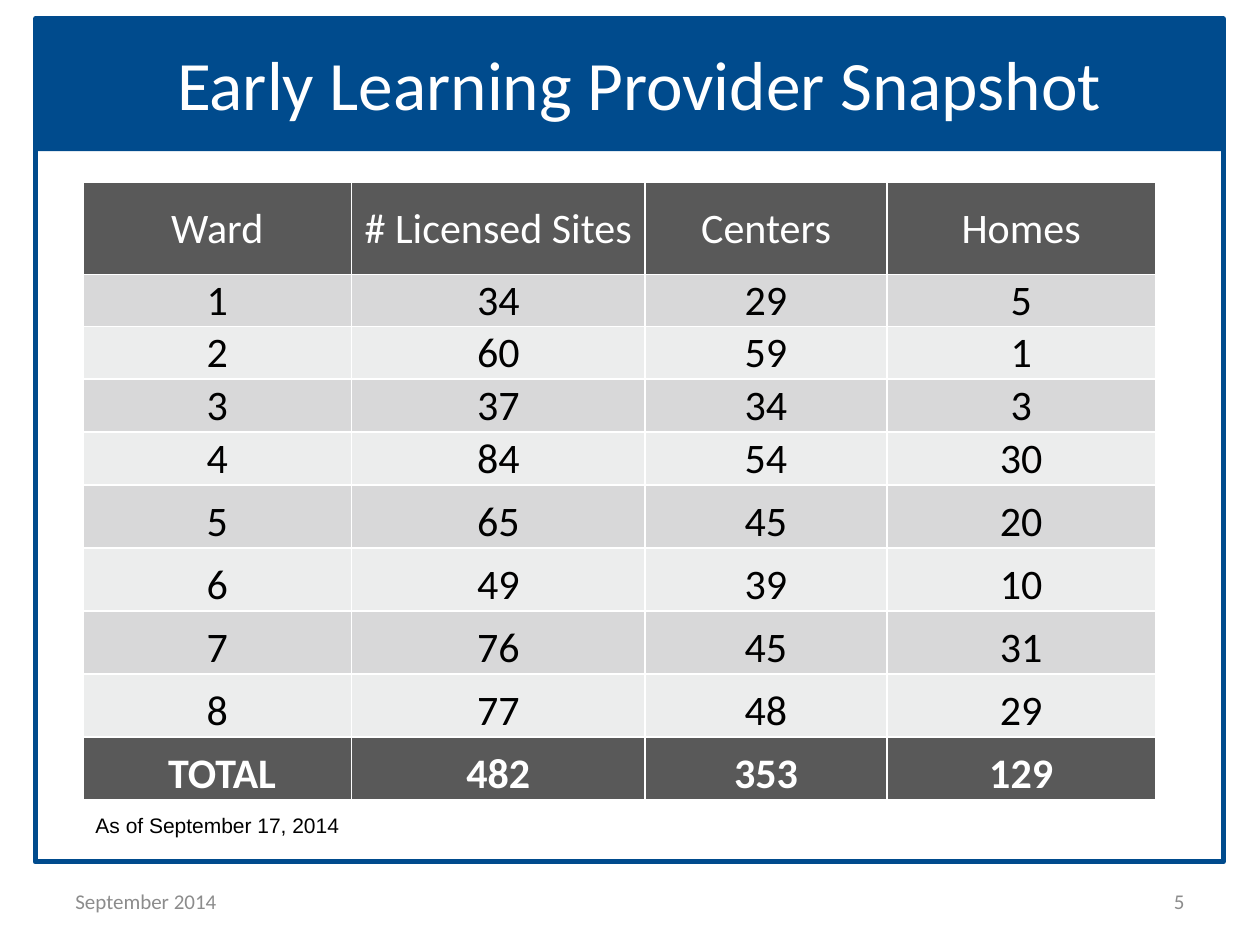
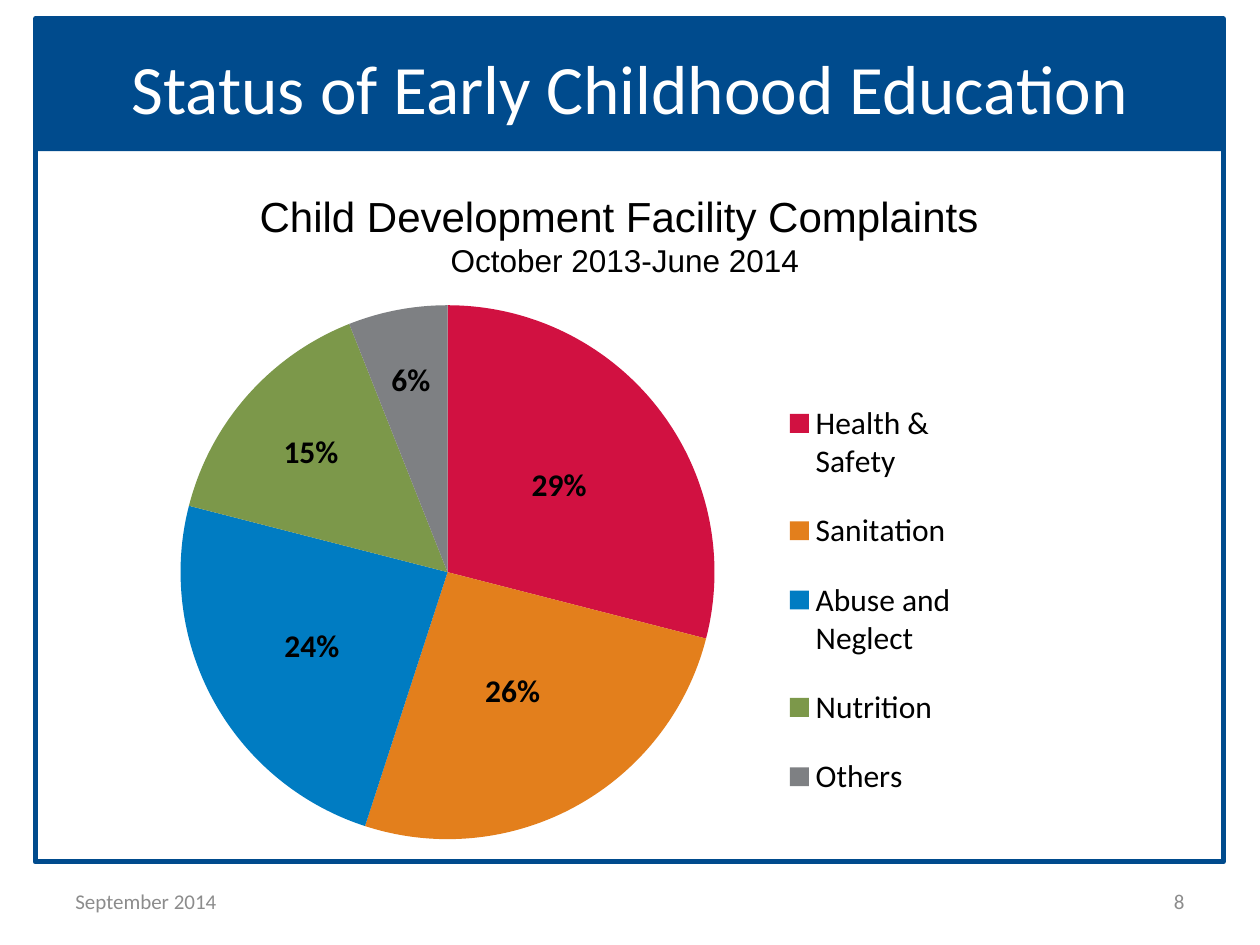
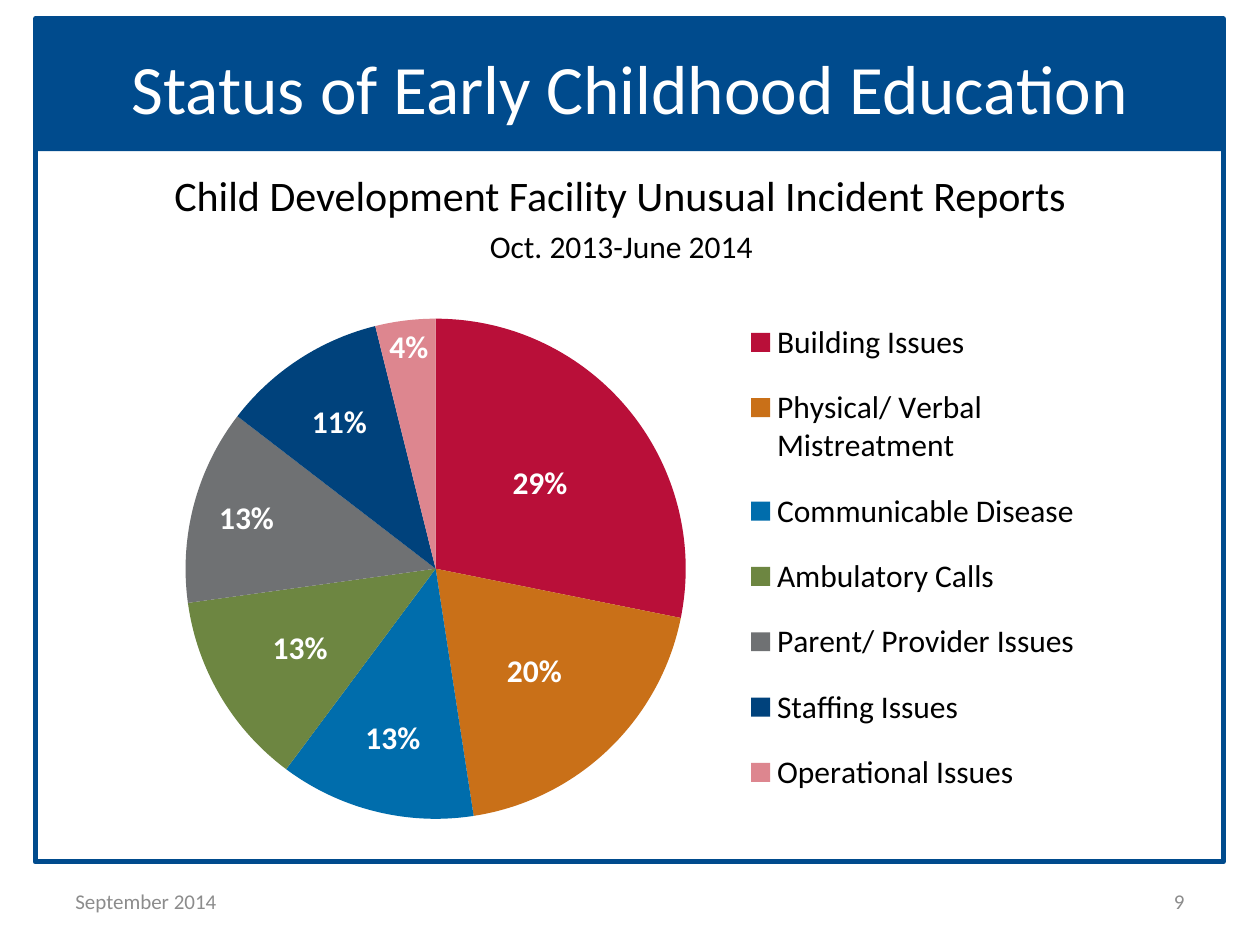
"""Build three early-learning slides: a provider table and two pie charts."""
from dataclasses import dataclass
from math import cos, pi, sin

from pptx import Presentation
from pptx import util as u
from pptx.chart.data import CategoryChartData
from pptx.dml.color import RGBColor
from pptx.enum import chart as ch, shapes, text
from pptx.oxml import parse_xml
from pptx.oxml.ns import nsdecls, qn

PX = 9144
BLUE = RGBColor(0x00, 0x4B, 0x8D)
WHITE = RGBColor(0xFF, 0xFF, 0xFF)
BLACK = RGBColor(0x00, 0x00, 0x00)
GRAY = RGBColor(0x8C, 0x8C, 0x8C)
DARK = RGBColor(0x59, 0x59, 0x59)
BAND_ODD = RGBColor(0xD8, 0xD8, 0xD9)
BAND_EVEN = RGBColor(0xEC, 0xED, 0xED)
LEFT, CENTER, RIGHT = text.PP_ALIGN.LEFT, text.PP_ALIGN.CENTER, text.PP_ALIGN.RIGHT
TOP, MIDDLE, BOTTOM = text.MSO_ANCHOR.TOP, text.MSO_ANCHOR.MIDDLE, text.MSO_ANCHOR.BOTTOM

HEADERS = ("Ward", "# Licensed Sites", "Centers", "Homes")
WARDS = ((34, 29, 5), (60, 59, 1), (37, 34, 3), (84, 54, 30),
         (65, 45, 20), (49, 39, 10), (76, 45, 31), (77, 48, 29))
COLUMN_WIDTHS = (213, 233, 192, 213)
ROW_HEIGHTS = (73, 41, 42, 42, 42, 50, 50, 50, 50, 50)


@dataclass(frozen=True)
class Box:
    """A rectangle in px."""
    x: int
    y: int
    w: int
    h: int

    def emu(self) -> tuple[int, ...]:
        """Return the rectangle in EMU."""
        return tuple(v * PX for v in (self.x, self.y, self.w, self.h))


@dataclass(frozen=True)
class Line:
    """One paragraph of text with its style."""
    words: str
    size: float
    color: RGBColor = BLACK
    align: int = LEFT
    font: str = "Calibri"
    before: int = 0
    bold: bool = False


@dataclass(frozen=True)
class Slice:
    """A pie slice; reach is the label's distance as a share of the radius."""
    name: str
    percent: int
    color: RGBColor
    reach: float


@dataclass(frozen=True)
class Pie:
    """A pie chart with its plot and legend areas in slide px."""
    box: Box
    plot: Box
    legend: Box
    label_color: RGBColor
    slices: tuple[Slice, ...]


COMPLAINTS = Pie(
    Box(94, 149, 704, 545), Box(143, 242, 424, 424), Box(618, 296, 146, 360), BLACK,
    (Slice("Health & Safety", 29, RGBColor(0xD1, 0x11, 0x41), 0.53),
     Slice("Sanitation", 26, RGBColor(0xE3, 0x7F, 0x1C), 0.51),
     Slice("Abuse and Neglect", 24, RGBColor(0x00, 0x7C, 0xC2), 0.58),
     Slice("Nutrition", 15, RGBColor(0x7C, 0x98, 0x4A), 0.68),
     Slice("Others", 6, RGBColor(0x7E, 0x80, 0x83), 0.73)))

INCIDENTS = Pie(
    Box(105, 177, 762, 500), Box(146, 253, 399, 397), Box(590, 235, 270, 415), WHITE,
    (Slice("Building Issues ", 29, RGBColor(0xB9, 0x0F, 0x39), 0.54),
     Slice("Physical/ Verbal Mistreatment", 20, RGBColor(0xC9, 0x70, 0x18), 0.57),
     Slice("Communicable Disease", 13, RGBColor(0x00, 0x6D, 0xAC), 0.7),
     Slice("Ambulatory Calls", 13, RGBColor(0x6D, 0x86, 0x41), 0.63),
     Slice("Parent/ Provider Issues", 13, RGBColor(0x6F, 0x71, 0x73), 0.78),
     Slice("Staffing Issues", 11, RGBColor(0x00, 0x42, 0x7C), 0.7),
     Slice("Operational Issues", 4, RGBColor(0xDD, 0x86, 0x8F), 0.89)))


def write(tf, lines: tuple[Line, ...], anchor: int) -> None:
    """Fill a text frame with styled paragraphs."""
    tf.word_wrap = True
    tf.vertical_anchor = anchor
    for i, line in enumerate(lines):
        p = tf.paragraphs[0] if i == 0 else tf.add_paragraph()
        p.text = line.words
        p.alignment = line.align
        p.space_before = u.Pt(line.before)
        f = p.font
        f.name, f.size, f.bold = line.font, u.Pt(line.size), line.bold
        f.color.rgb = line.color


def add_text(s, box: Box, *lines: Line, anchor: int = TOP) -> None:
    """Add a text box."""
    write(s.shapes.add_textbox(*box.emu()).text_frame, lines, anchor)


def add_rect(s, box: Box, filled: bool) -> None:
    """Add a blue rectangle, either filled or outlined."""
    sp = s.shapes.add_shape(shapes.MSO_SHAPE.RECTANGLE, *box.emu())
    sp.shadow.inherit = False
    if filled:
        sp.fill.solid()
        sp.fill.fore_color.rgb = BLUE
        sp.line.fill.background()
    else:
        sp.fill.background()
        sp.line.color.rgb = BLUE
        sp.line.width = u.Pt(3)


def add_page(prs, title: str, title_box: Box, number: int):
    """Add a slide with its band, frame, title and footer."""
    s = prs.slides.add_slide(prs.slide_layouts[6])
    add_rect(s, Box(28, 15, 943, 105), True)
    add_rect(s, Box(28, 15, 943, 669), False)
    add_text(s, title_box, Line(title, 39.6, WHITE, CENTER), anchor=MIDDLE)
    add_text(s, Box(50, 695, 233, 40), Line("September 2014", 12, GRAY), anchor=MIDDLE)
    add_text(s, Box(717, 695, 233, 40), Line(str(number), 12, GRAY, RIGHT), anchor=MIDDLE)
    return s


def style_cell(cell, line: Line, fill: RGBColor, anchor: int) -> None:
    """Set a cell's text, fill, margins and white borders."""
    cell.fill.solid()
    cell.fill.fore_color.rgb = fill
    cell.margin_left = cell.margin_right = cell.margin_top = PX
    cell.margin_bottom = 0
    write(cell.text_frame, (line,), MIDDLE)
    cell.vertical_anchor = anchor
    tc_pr = cell._tc.get_or_add_tcPr()
    for i, side in enumerate(("lnL", "lnR", "lnT", "lnB")):
        tc_pr.insert(i, parse_xml(
            f'<a:{side} {nsdecls("a")} w="12700"><a:solidFill>'
            f'<a:srgbClr val="{WHITE}"/></a:solidFill></a:{side}>'))


def add_ward_table(s) -> None:
    """Add the table of licensed sites by ward with its totals."""
    totals = tuple(sum(column) for column in zip(*WARDS))
    rows = [HEADERS, *((i, *ward) for i, ward in enumerate(WARDS, 1)), (" TOTAL", *totals)]
    table = s.shapes.add_table(len(rows), len(HEADERS), *Box(66, 145, 851, 490).emu()).table
    for column, width in zip(table.columns, COLUMN_WIDTHS):
        column.width = width * PX
    for i, (row, height) in enumerate(zip(rows, ROW_HEIGHTS)):
        table.rows[i].height = height * PX
        last = i == len(rows) - 1
        edge = i == 0 or last
        fill = DARK if edge else BAND_ODD if i % 2 else BAND_EVEN
        for j, value in enumerate(row):
            line = Line(str(value), 24, WHITE if edge else BLACK, CENTER, bold=last)
            style_cell(table.cell(i, j), line, fill, BOTTOM if i else MIDDLE)


def area_layout(area: Box, box: Box, inner: bool):
    """Make a manual layout that puts an area inside a chart's box."""
    target = '<c:layoutTarget val="inner"/>' if inner else ""
    shares = {"x": (area.x - box.x) / box.w, "y": (area.y - box.y) / box.h,
              "w": area.w / box.w, "h": area.h / box.h}
    return parse_xml(
        f'<c:layout {nsdecls("c")}><c:manualLayout>{target}'
        '<c:xMode val="edge"/><c:yMode val="edge"/>'
        + "".join(f'<c:{k} val="{v:.3f}"/>' for k, v in shares.items())
        + "</c:manualLayout></c:layout>")


def label_slices(series, pie: Pie) -> None:
    """Colour the slices and move each label along its slice's middle."""
    total = sum(sl.percent for sl in pie.slices)
    start = 0
    for i, sl in enumerate(pie.slices):
        point = series.points[i]
        point.format.fill.solid()
        point.format.fill.fore_color.rgb = sl.color
        label = point.data_label
        f = label.font
        f.name, f.size, f.bold = "Calibri", u.Pt(18), True
        f.color.rgb = pie.label_color
        label.position = ch.XL_LABEL_POSITION.CENTER
        angle = 2 * pi * (start + sl.percent / 2) / total
        shift = (sl.reach - 0.5) * pie.plot.w / 2
        start += sl.percent
        idx = series._element.findall(".//" + qn("c:dLbl"))[i].find(qn("c:idx"))
        idx.addnext(parse_xml(
            f'<c:numFmt {nsdecls("c")} formatCode="0&quot;%&quot;" sourceLinked="0"/>'))
        idx.addnext(parse_xml(
            f'<c:layout {nsdecls("c")}><c:manualLayout>'
            f'<c:x val="{shift * sin(angle) / pie.box.w:.3f}"/>'
            f'<c:y val="{-shift * cos(angle) / pie.box.h:.3f}"/>'
            '</c:manualLayout></c:layout>'))


def add_pie(s, pie: Pie) -> None:
    """Add a pie chart with a legend on the right."""
    data = CategoryChartData()
    data.categories = [sl.name for sl in pie.slices]
    data.add_series("Series 1", [sl.percent for sl in pie.slices])
    chart = s.shapes.add_chart(ch.XL_CHART_TYPE.PIE, *pie.box.emu(), data).chart
    chart.has_title = False
    chart.font.name, chart.font.size = "Calibri", u.Pt(18)
    chart.font.color.rgb = BLACK
    chart.has_legend = True
    legend = chart.legend
    legend.position = ch.XL_LEGEND_POSITION.RIGHT
    legend.include_in_layout = False
    legend_el = legend._element
    plot_el = chart._chartSpace.chart.plotArea
    for el in (legend_el, plot_el):
        for old in el.findall(qn("c:layout")):
            el.remove(old)
    plot_el.insert(0, area_layout(pie.plot, pie.box, True))
    legend_el.find(qn("c:legendPos")).addnext(area_layout(pie.legend, pie.box, False))
    plot = chart.plots[0]
    plot.vary_by_categories = True
    label_slices(plot.series[0], pie)


def main() -> None:
    """Build and save the deck."""
    prs = Presentation()
    prs.slide_width, prs.slide_height = 1000 * PX, 750 * PX
    status, status_box = "Status of Early Childhood Education", Box(50, 30, 900, 78)

    s = add_page(prs, "Early Learning Provider Snapshot", Box(98, 28, 819, 76), 5)
    add_ward_table(s)
    add_text(s, Box(66, 640, 473, 30), Line("As of September 17, 2014", 12, font="Arial"))

    s = add_page(prs, status, status_box, 8)
    add_pie(s, COMPLAINTS)
    add_text(s, Box(31, 146, 930, 81),
             Line("Child Development Facility Complaints ", 24, BLACK, CENTER, "Arial"),
             Line("October 2013-June 2014", 18, BLACK, CENTER, "Arial"))

    s = add_page(prs, status, status_box, 9)
    add_text(s, Box(13, 130, 966, 603),
             Line("Child Development Facility Unusual Incident Reports ", 24, BLACK, CENTER,
                  before=5),
             Line("Oct. 2013-June 2014 ", 18, BLACK, CENTER, before=4))
    add_pie(s, INCIDENTS)
    prs.save("out.pptx")


if __name__ == "__main__":
    main()
